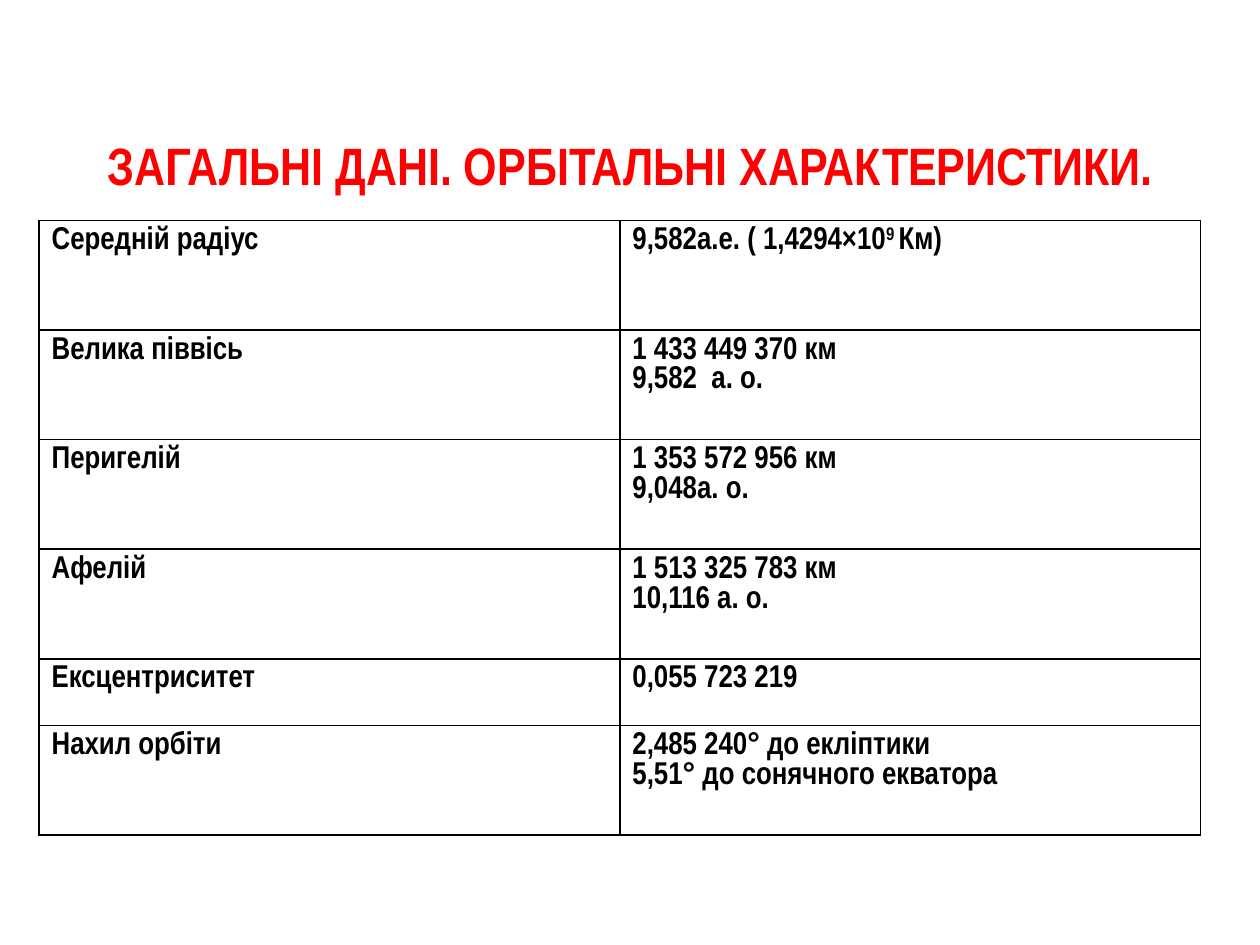
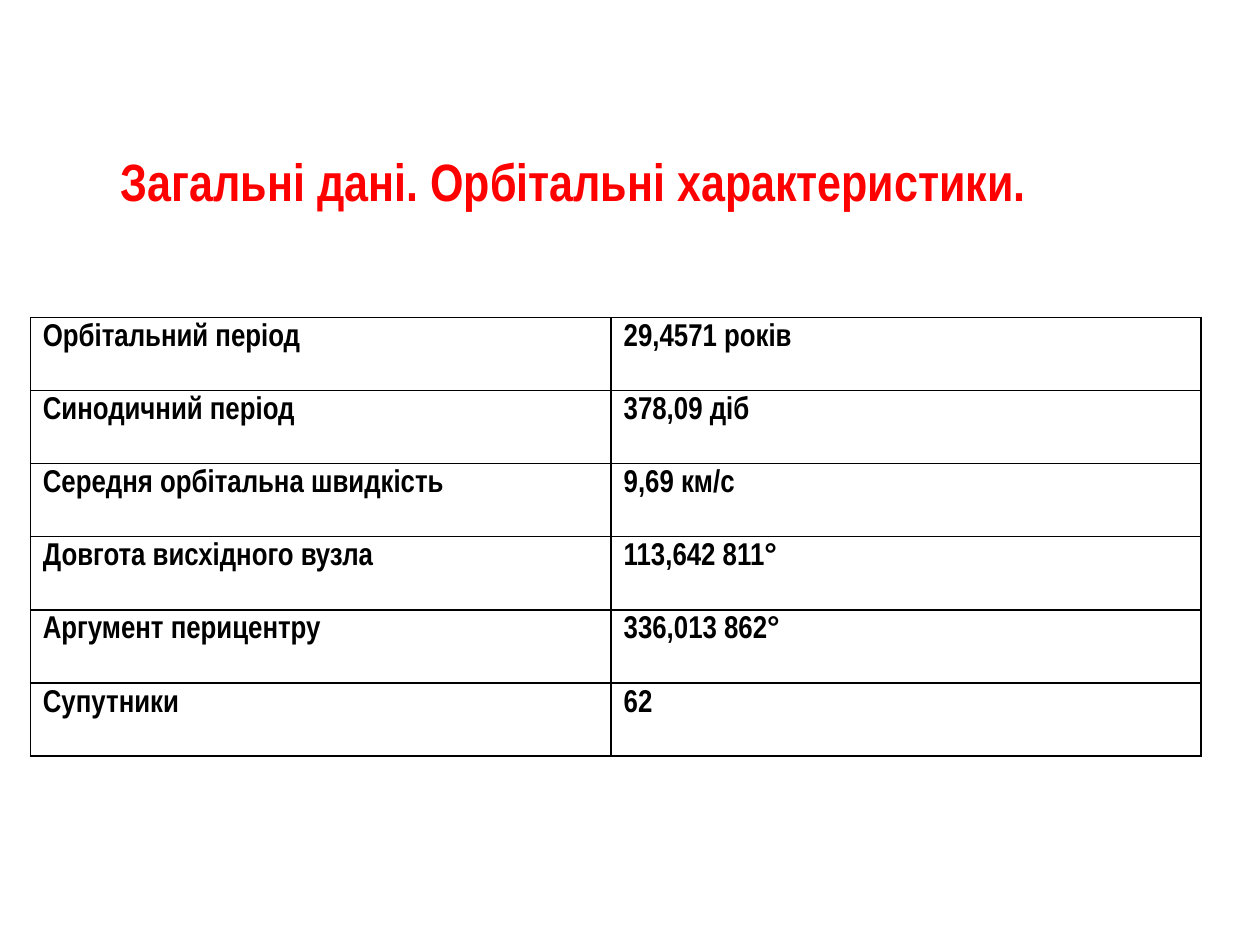
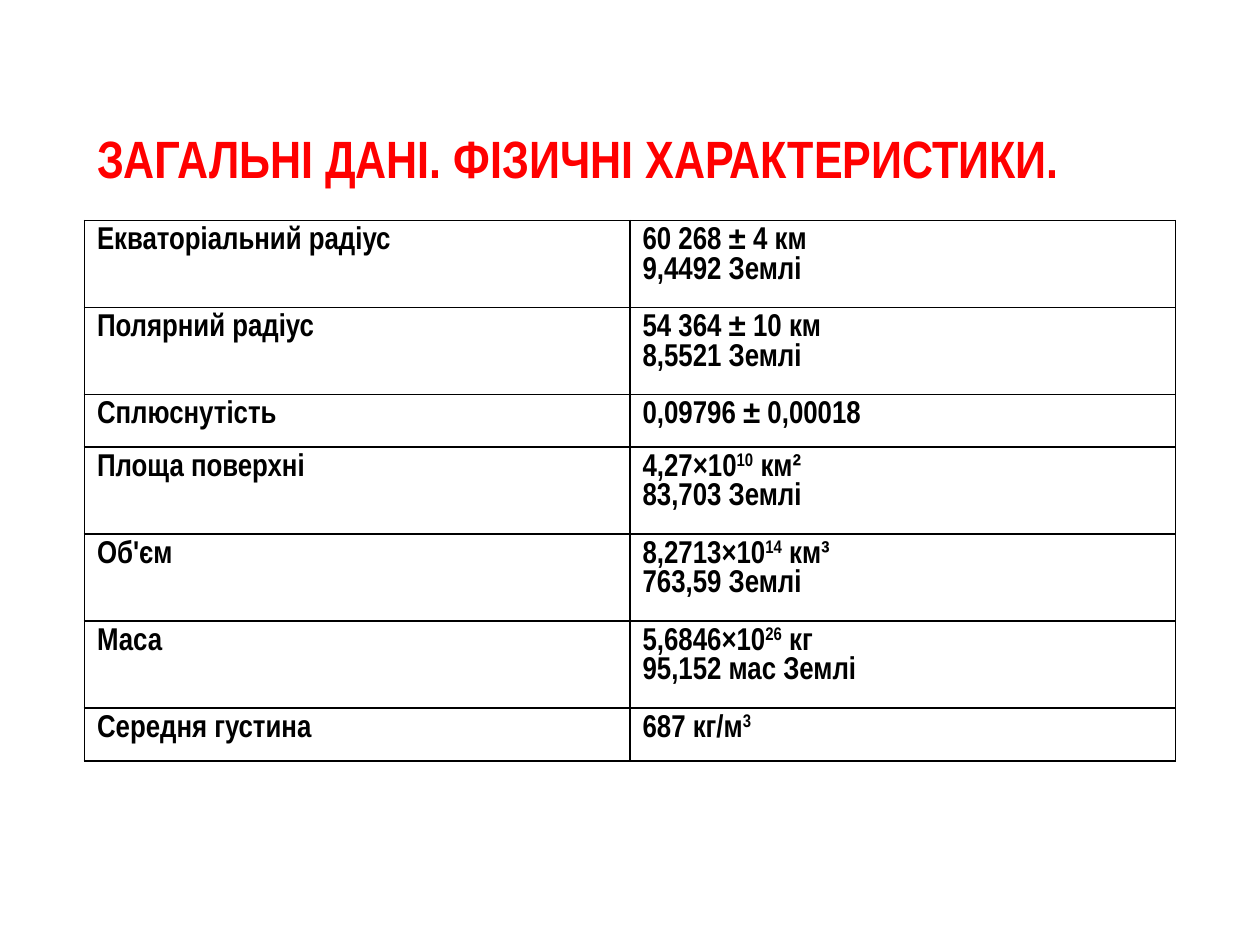
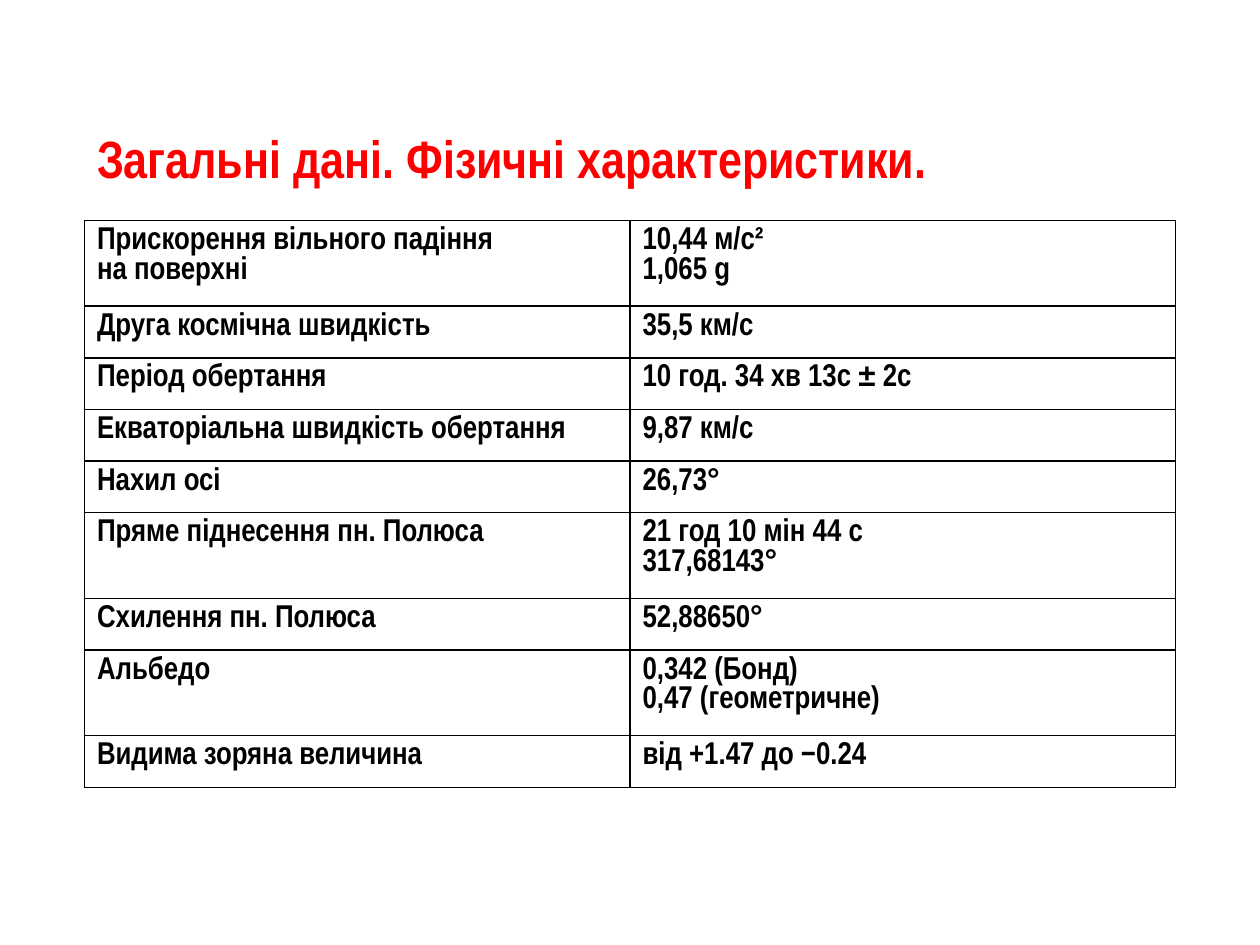
import pptx
import pptx.dml.color
import pptx.enum.text
import pptx.util
import lxml.etree
import pptx.oxml.ns

Inch = pptx.util.Inches
Pt = pptx.util.Pt
qn = pptx.oxml.ns.qn

RED = pptx.dml.color.RGBColor(255, 0, 0)
BLACK = pptx.dml.color.RGBColor(0, 0, 0)
FONT = "Arial Narrow"
WIDE, HIGH = 10, 7.5
HEAD = (8.67, 1.25)  # title width and height
EDGE = Pt(1)

# In values, ^ starts and ends raised text.
# "tall" holds row heights by size: 1 is short, 2 is tall.
SLIDES = [
    {
        "title": "ЗАГАЛЬНІ ДАНІ. ОРБІТАЛЬНІ ХАРАКТЕРИСТИКИ.",
        "head": (0.75, 0.36),
        "at": (0.31, 1.75),
        "cols": (4.61, 4.61),
        "tall": {1: 0.53, 2: 0.87},
        "rows": [
            (2, "Середній радіус", "9,582а.е. ( 1,4294×10^9 ^Км)"),
            (2, "Велика піввісь", "1 433 449 370 км\n9,582  а. о."),
            (2, "Перигелій", "1 353 572 956 км\n9,048а. о."),
            (2, "Афелій", "1 513 325 783 км\n10,116 а. о."),
            (1, "Ексцентриситет", "0,055 723 219"),
            (2, "Нахил орбіти",
             "2,485 240° до екліптики\n5,51° до сонячного екватора"),
        ],
    },
    {
        "title": "Загальні дані. Орбітальні характеристики.",
        "head": (0.86, 0.48),
        "at": (0.24, 2.52),
        "cols": (4.61, 4.68),
        "tall": {1: 0.58},
        "rows": [
            (1, "Орбітальний період", "29,4571 років"),
            (1, "Синодичний період", "378,09 діб"),
            (1, "Середня орбітальна швидкість", "9,69 км/с"),
            (1, "Довгота висхідного вузла", "113,642 811°"),
            (1, "Аргумент перицентру", "336,013 862°"),
            (1, "Супутники", "62"),
        ],
    },
    {
        "title": "ЗАГАЛЬНІ ДАНІ. ФІЗИЧНІ ХАРАКТЕРИСТИКИ.",
        "head": (0.67, 0.3),
        "at": (0.67, 1.75),
        "cols": (4.33, 4.33),
        "tall": {1: 0.42, 2: 0.69},
        "rows": [
            (2, "Екваторіальний радіус", "60 268 ± 4 км\n9,4492 Землі"),
            (2, "Полярний радіус", "54 364 ± 10 км\n8,5521 Землі"),
            (1, "Сплюснутість", "0,09796 ± 0,00018"),
            (2, "Площа поверхні", "4,27×10^10^ км²\n83,703 Землі"),
            (2, "Об'єм", "8,2713×10^14^ км³\n763,59 Землі"),
            (2, "Маса", "5,6846×10^26^ кг\n95,152 мас Землі"),
            (1, "Середня густина", "687 кг/м^3^"),
        ],
    },
    {
        "title": "Загальні дані. Фізичні характеристики.",
        "head": (0.67, 0.3),
        "at": (0.67, 1.75),
        "cols": (4.33, 4.33),
        "tall": {1: 0.41, 2: 0.68},
        "rows": [
            (2, "Прискорення вільного падіння\nна поверхні",
             "10,44 м/с²\n1,065 g"),
            (1, "Друга космічна швидкість", "35,5 км/с"),
            (1, "Період обертання", "10 год. 34 хв 13с ± 2с"),
            (1, "Екваторіальна швидкість обертання", "9,87 км/c"),
            (1, "Нахил осі", "26,73°"),
            (2, "Пряме піднесення пн. Полюса",
             "21 год 10 мін 44 с\n317,68143°"),
            (1, "Схилення пн. Полюса", "52,88650°"),
            (2, "Альбедо", "0,342 (Бонд)\n0,47 (геометричне)"),
            (1, "Видима зоряна величина", "від +1.47 до −0.24"),
        ],
    },
]


def write(frame, text, size, color):
    """Fill a frame run by run, with line breaks and raised text."""
    para = frame.paragraphs[0]
    para.alignment = pptx.enum.text.PP_ALIGN.LEFT
    for part, chunk in enumerate(text.split("^")):
        for row, line in enumerate(chunk.split("\n")):
            if row:
                para.add_line_break()
            if not line:
                continue
            run = para.add_run()
            run.text = line
            font = run.font
            font.name, font.size, font.bold = FONT, Pt(size), True
            font.color.rgb = color
            if part % 2:
                run._r.get_or_add_rPr().set("baseline", "30000")


def frame_cell(cell):
    """Give a cell black borders and no fill."""
    props = cell._tc.get_or_add_tcPr()
    for side in ("a:lnL", "a:lnR", "a:lnT", "a:lnB"):
        line = lxml.etree.SubElement(props, qn(side), w=str(EDGE))
        fill = lxml.etree.SubElement(line, qn("a:solidFill"))
        lxml.etree.SubElement(fill, qn("a:srgbClr"), val=str(BLACK))
    cell.fill.background()


def add_title(slide, data):
    title = slide.shapes.title
    title.left, title.top = map(Inch, data["head"])
    title.width, title.height = map(Inch, HEAD)
    frame = title.text_frame
    frame.word_wrap = True
    frame.auto_size = pptx.enum.text.MSO_AUTO_SIZE.NONE
    frame.vertical_anchor = pptx.enum.text.MSO_ANCHOR.BOTTOM
    write(frame, data["title"], 30, RED)


def add_grid(slide, data):
    rows, cols = data["rows"], data["cols"]
    highs = [data["tall"][row[0]] for row in rows]
    box = map(Inch, (*data["at"], sum(cols), sum(highs)))
    grid = slide.shapes.add_table(len(rows), len(cols), *box).table
    grid.first_row = grid.horz_banding = False
    for col, wide in zip(grid.columns, cols):
        col.width = Inch(wide)
    for line, high, row in zip(grid.rows, highs, rows):
        line.height = Inch(high)
        for cell, text in zip(line.cells, row[1:]):
            frame_cell(cell)
            write(cell.text_frame, text, 18, BLACK)


def main():
    deck = pptx.Presentation()
    deck.slide_width, deck.slide_height = Inch(WIDE), Inch(HIGH)
    for data in SLIDES:
        slide = deck.slides.add_slide(deck.slide_layouts[5])
        add_title(slide, data)
        add_grid(slide, data)
    deck.save("out.pptx")


if __name__ == "__main__":
    main()
